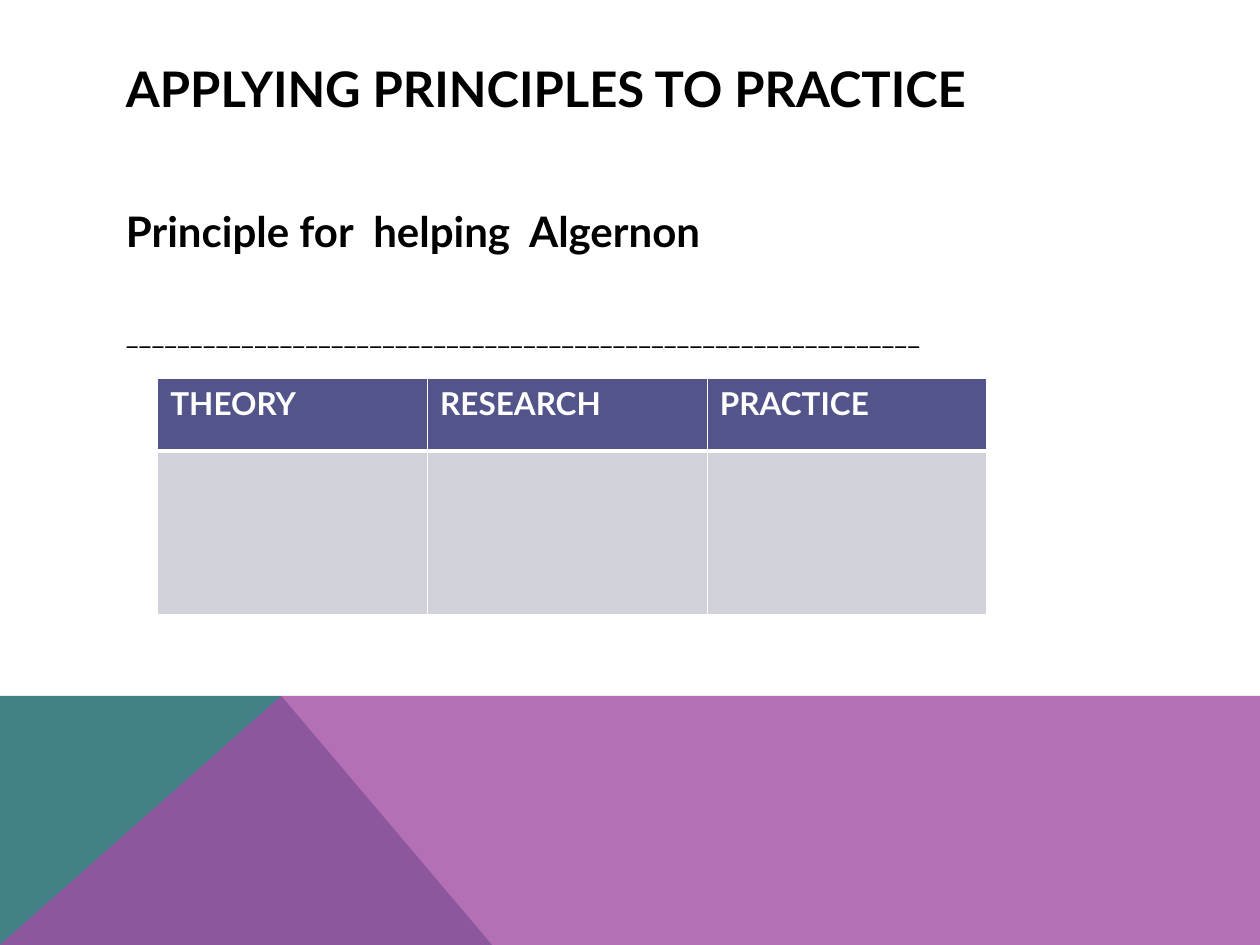
from typing import NamedTuple

from lxml.etree import SubElement
from pptx import Presentation
from pptx.dml.color import RGBColor
from pptx.enum.text import MSO_ANCHOR
from pptx.oxml.ns import qn
from pptx.util import Cm, Pt

FONT = "Lato"
COLORS = {
    "teal": "438086",
    "purple": "A04DA3",
    "header": "53548A",
    "cell": "D1D1DA",
    "black": "000000",
    "white": "FFFFFF",
}


class Band(NamedTuple):
    points: list[tuple[float, float]]  # cm
    color: str
    opacity: int  # percent


class TextArea(NamedTuple):
    top: float  # cm
    height: float
    inset_top: float
    anchor: MSO_ANCHOR


class Line(NamedTuple):
    text: str
    size: int
    bold: bool
    space_before: int = 0


def rgb(name: str) -> RGBColor:
    return RGBColor.from_string(COLORS[name])


def style_paragraph(p, size: int, color: str, bold: bool) -> None:
    for r in p.runs:
        r.font.name = FONT
        r.font.size = Pt(size)
        r.font.bold = bold
        r.font.color.rgb = rgb(color)


def add_band(s, band: Band) -> None:
    start, *rest = [(Cm(x), Cm(y)) for x, y in band.points]
    builder = s.shapes.build_freeform(*start)
    builder.add_line_segments(rest, close=True)
    sp = builder.convert_to_shape()
    sp.shadow.inherit = False
    sp.fill.solid()
    sp.fill.fore_color.rgb = rgb(band.color)
    sp.line.fill.background()
    if band.opacity < 100:
        clr = sp._element.spPr.find(qn("a:solidFill"))[0]
        SubElement(clr, qn("a:alpha"), val=str(band.opacity * 1000))


def add_text(s, area: TextArea, lines: list[Line]) -> None:
    sp = s.shapes.add_textbox(Cm(2.29), Cm(area.top), Cm(20.88), Cm(area.height))
    tf = sp.text_frame
    tf.word_wrap = True
    tf.vertical_anchor = area.anchor
    tf.margin_top = Cm(area.inset_top)
    tf.text = "\n".join(line.text for line in lines)
    for p, line in zip(tf.paragraphs, lines):
        p.space_before = Pt(line.space_before)
        style_paragraph(p, line.size, "black", line.bold)


def set_borders(cell, bottom: int, top: int) -> None:
    tc_pr = cell._tc.get_or_add_tcPr()
    widths = {"a:lnL": 1, "a:lnR": 1, "a:lnT": top, "a:lnB": bottom}
    for i, (tag, width) in enumerate(widths.items()):
        ln = tc_pr.makeelement(qn(tag), {"w": str(Pt(width))})
        fill = SubElement(ln, qn("a:solidFill"))
        SubElement(fill, qn("a:srgbClr"), val=COLORS["white"])
        tc_pr.insert(i, ln)  # borders come before the fill


def add_table(s, headings: list[str], widths: list[float], heights: list[float]) -> None:
    frame = s.shapes.add_table(
        len(heights), len(widths), Cm(3.18), Cm(7.62), Cm(sum(widths)), Cm(sum(heights))
    )
    table = frame.table
    for column, width in zip(table.columns, widths):
        column.width = Cm(width)
    for row, height in zip(table.rows, heights):
        row.height = Cm(height)
    for cell, heading in zip(table.rows[0].cells, headings):
        cell.text = heading
        style_paragraph(cell.text_frame.paragraphs[0], 18, "white", True)
    for row, color, top, bottom in zip(table.rows, ("header", "cell"), (1, 3), (3, 1)):
        for cell in row.cells:
            cell.fill.solid()
            cell.fill.fore_color.rgb = rgb(color)
            set_borders(cell, bottom, top)


def main() -> None:
    prs = Presentation()
    prs.slide_width, prs.slide_height = Cm(25.4), Cm(19.05)
    s = prs.slides.add_slide(prs.slide_layouts[6])

    # Coloured bands along the bottom
    top, bottom, right, peak = 14.03, 19.05, 25.4, 5.67
    bands = [
        Band([(0, bottom), (0, top), (peak, top), (9.92, bottom)], "teal", 100),
        Band([(0, bottom), (peak, top), (right, top), (right, bottom)], "purple", 80),
    ]
    for band in bands:
        add_band(s, band)

    # Title and principle with its ruled line
    add_text(
        s,
        TextArea(1.02, 1.52, 0.13, MSO_ANCHOR.MIDDLE),
        [Line("APPLYING PRINCIPLES TO PRACTICE", 28, True)],
    )
    add_text(
        s,
        TextArea(3.05, 9.93, 1.09, MSO_ANCHOR.TOP),
        [Line("Principle for  helping  Algernon", 24, True), Line("_" * 62, 16, False, 35)],
    )

    # Theory, research and practice table
    add_table(s, ["THEORY", "RESEARCH", "PRACTICE"], [5.44, 5.64, 5.64], [1.47, 3.3])

    prs.save("out.pptx")


if __name__ == "__main__":
    main()
